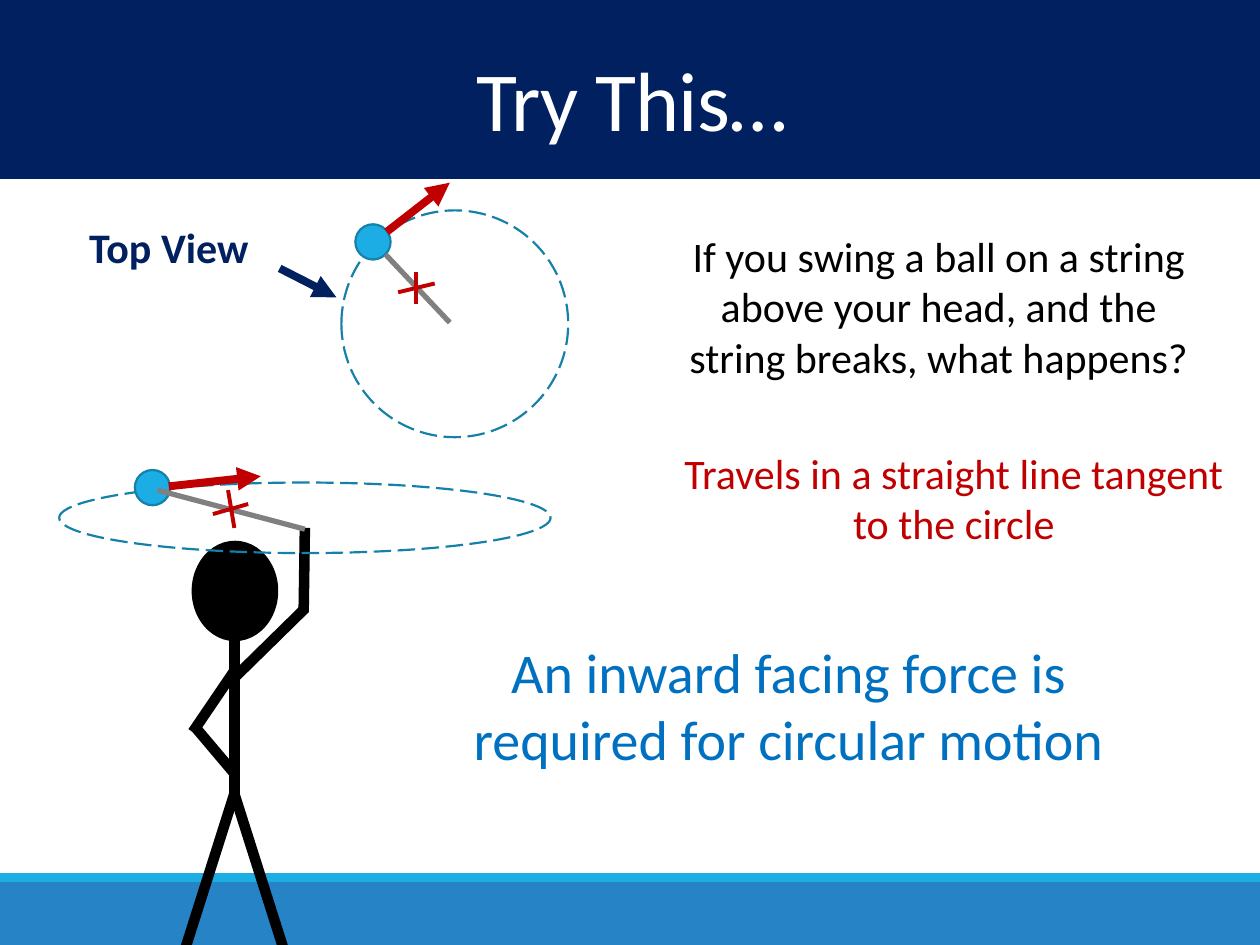
from lxml.etree import SubElement
from pptx import Presentation
from pptx.dml.color import RGBColor
from pptx.enum.dml import MSO_LINE_DASH_STYLE as Dash
from pptx.enum.shapes import MSO_CONNECTOR as Connector, MSO_SHAPE as Shape
from pptx.enum.text import MSO_ANCHOR as Anchor, PP_ALIGN as Align
from pptx.oxml.ns import qn
from pptx.util import Inches, Pt

NAVY = RGBColor(0x00, 0x20, 0x60)
BLUE = RGBColor(0x26, 0x83, 0xC6)
SKY = RGBColor(0x1C, 0xAD, 0xE4)
TEAL = RGBColor(0x15, 0x80, 0xA9)
AZURE = RGBColor(0x00, 0x70, 0xC0)
RED = RGBColor(0xC0, 0x00, 0x00)
GRAY = RGBColor(0x80, 0x80, 0x80)
BLACK = RGBColor(0x00, 0x00, 0x00)
WHITE = RGBColor(0xFF, 0xFF, 0xFF)


class SlideBuilder:
    font_name = "Calibri"
    outline_width = 1.25
    ball_size = 0.28

    def __init__(self, page):
        self.page = page

    def shape(self, kind, place, fill=None, outline=None, dash=None):
        item = self.page.shapes.add_shape(kind, *map(Inches, place))
        item.shadow.inherit = False
        if fill is None:
            item.fill.background()
        else:
            item.fill.solid()
            item.fill.fore_color.rgb = fill
        if outline is None:
            item.line.fill.background()
        else:
            item.line.color.rgb = outline
            item.line.width = Pt(self.outline_width)
            item.line.dash_style = dash

    def band(self, top, height, color):
        self.shape(Shape.RECTANGLE, (0, top, 10, height), color)

    def orbit(self, *place):
        self.shape(Shape.OVAL, place, outline=TEAL, dash=Dash.LONG_DASH)

    def ball(self, left, top):
        place = (left, top, self.ball_size, self.ball_size)
        self.shape(Shape.OVAL, place, SKY, TEAL)

    def line(self, start, end, color, width, arrow=False):
        points = map(Inches, (*start, *end))
        item = self.page.shapes.add_connector(Connector.STRAIGHT, *points)
        item.line.color.rgb = color
        item.line.width = Pt(width)
        if arrow:
            SubElement(item.line._get_or_add_ln(), qn("a:tailEnd"), type="triangle")
        SubElement(item._element.spPr, qn("a:effectLst"))

    def text(self, words, place, size, color, bold=False, anchor=Anchor.TOP,
             line_spacing=1.0, tracking=0):
        box = self.page.shapes.add_textbox(*map(Inches, place))
        frame = box.text_frame
        para = frame.paragraphs[0]
        span = para.add_run()
        span.text = words
        span.font.color.rgb = color
        formats = {
            frame: {"word_wrap": True, "vertical_anchor": anchor},
            para: {"alignment": Align.CENTER, "line_spacing": line_spacing},
            span.font: {"name": self.font_name, "size": Pt(size), "bold": bold},
        }
        for target, values in formats.items():
            for name, value in values.items():
                setattr(target, name, value)
        if tracking:
            span.font._element.set("spc", str(int(tracking * 100)))


def draw_background(builder):
    builder.band(7, 0.5, BLUE)
    builder.band(6.93, 0.07, SKY)
    builder.band(0, 1.42, NAVY)
    builder.text("Try This…", (0.03, 0.42, 9.97, 0.84), 48, WHITE,
                 anchor=Anchor.MIDDLE, line_spacing=0.85, tracking=-0.5)


def draw_figure(builder):
    builder.shape(Shape.OVAL, (1.53, 4.3, 0.67, 0.78), BLACK, BLACK)
    hip = (1.86, 6.3)
    limbs = [
        ((1.86, 4.98), (1.86, 6.35)),
        (hip, (1.47, 7.53)),
        (hip, (2.25, 7.53)),
        ((1.53, 5.81), (1.87, 5.31)),
        ((2.42, 4.83), (1.87, 5.37)),
        ((1.54, 5.76), (1.87, 6.15)),
        ((2.42, 4.19), (2.41, 4.86)),
    ]
    for start, end in limbs:
        builder.line(start, end, BLACK, 6)


def draw_side_view(builder):
    builder.orbit(0.47, 3.83, 3.9, 0.56)
    builder.ball(1.07, 3.73)
    builder.line((2.42, 4.2), (1.25, 3.89), GRAY, 3)


def draw_top_view(builder):
    builder.text("Top View", (0.39, 1.71, 1.9, 0.5), 24, NAVY, bold=True)
    builder.orbit(2.71, 1.67, 1.8, 1.8)
    builder.ball(2.82, 1.78)
    builder.line((3.57, 2.56), (3.06, 2.02), GRAY, 3)


def draw_arrows_and_breaks(builder):
    arrows = [
        ((2.22, 2.13), (2.67, 2.36), NAVY),
        ((3.07, 1.84), (3.57, 1.45), RED),
        ((1.34, 3.86), (2.07, 3.78), RED),
    ]
    for start, end, color in arrows:
        builder.line(start, end, color, 4.5, arrow=True)
    break_marks = [
        ((1.81, 3.89), (1.86, 4.19)),
        ((1.69, 4.08), (1.97, 4)),
        ((3.16, 2.32), (3.45, 2.25)),
        ((3.3, 2.41), (3.3, 2.16)),
    ]
    for start, end in break_marks:
        builder.line(start, end, RED, 2.25)


def draw_statements(builder):
    statements = [
        ("If you swing a ball on a string above your head, and the string breaks, "
         "what happens?", (5.32, 1.78, 4.26, 1.31), 24, BLACK),
        ("An inward facing force is required for circular motion",
         (3.31, 5.01, 5.9, 1.18), 32, AZURE),
        ("Travels in a straight line tangent to the circle",
         (5.32, 3.5, 4.5, 0.91), 24, RED),
    ]
    for statement in statements:
        builder.text(*statement)


def main():
    deck = Presentation()
    deck.slide_width, deck.slide_height = Inches(10), Inches(7.5)
    builder = SlideBuilder(deck.slides.add_slide(deck.slide_layouts[6]))
    draw_background(builder)
    draw_figure(builder)
    draw_side_view(builder)
    draw_statements(builder)
    draw_top_view(builder)
    draw_arrows_and_breaks(builder)
    deck.save("out.pptx")


if __name__ == "__main__":
    main()
